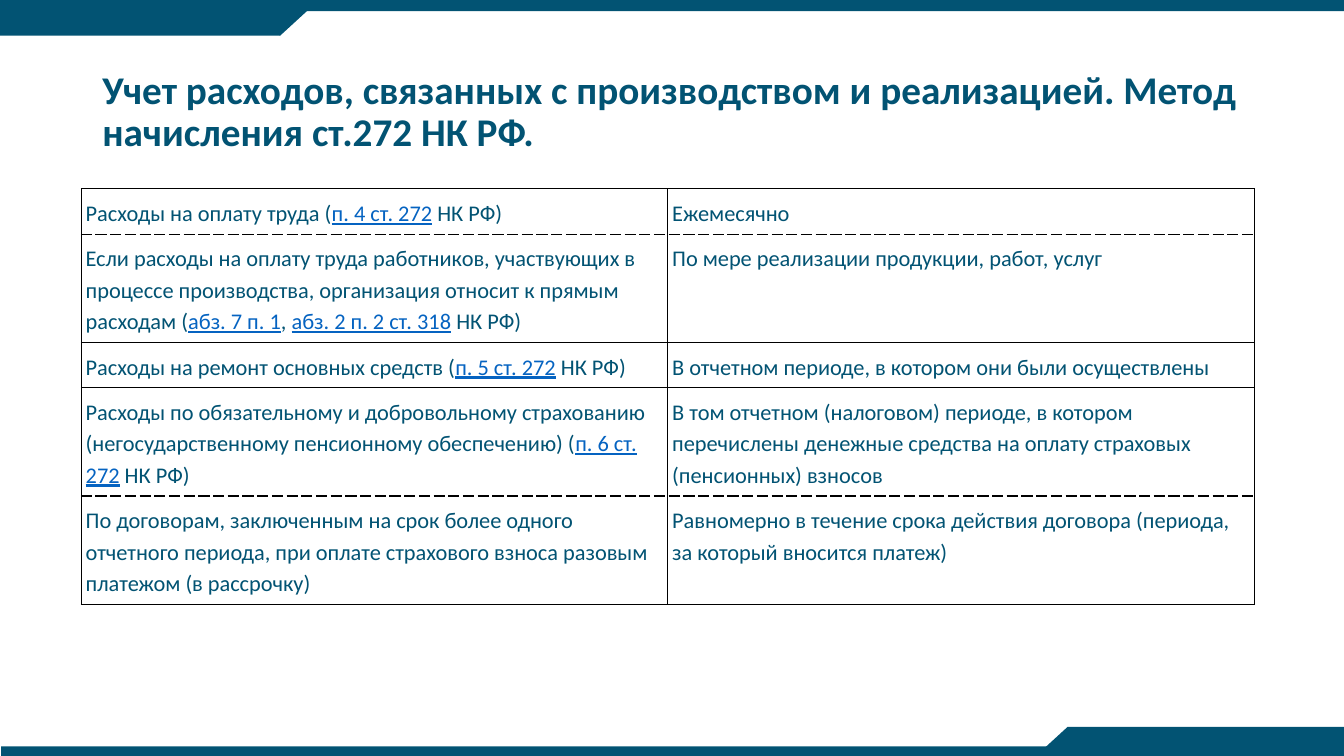
"""Build a slide with a table on when expenses are recognised under the accrual method."""
from lxml import etree
from pptx import Presentation
from pptx.dml.color import RGBColor
from pptx.enum.shapes import MSO_SHAPE
from pptx.enum.text import MSO_ANCHOR
from pptx.oxml.ns import qn
from pptx.util import Cm, Pt

RECT = MSO_SHAPE.RECTANGLE
MERGE = MSO_SHAPE.FLOWCHART_MERGE
MIDDLE = MSO_ANCHOR.MIDDLE
TEAL = "025373"
BLUE = "0563C1"


def paint(color, code):
    color.rgb = RGBColor.from_string(code)


def add_run(para, text, size, code):
    run = para.add_run()
    run.text = text
    run.font.name = "Calibri"
    run.font.size = Pt(size)
    paint(run.font.color, code)
    return run


deck = Presentation()
deck.slide_width = Cm(33.87)
deck.slide_height = Cm(19.05)
slide = deck.slides.add_slide(deck.slide_layouts[6])

bars = [
    (RECT, 0, 0, 33.87, 0.28, 0),
    (RECT, 0.03, 18.81, 33.84, 0.24, 0),
    (RECT, 0, 0.13, 7.06, 0.77, 0),
    (MERGE, 6.22, 0.13, 1.68, 0.77, 0),
    (RECT, 26.9, 18.32, 6.97, 0.73, 0),
    (MERGE, 26.06, 18.32, 1.68, 0.77, 180),
]
for kind, left, top, width, height, turn in bars:
    bar = slide.shapes.add_shape(kind, Cm(left), Cm(top), Cm(width), Cm(height))
    bar.rotation = turn
    bar.shadow.inherit = False
    bar.fill.solid()
    paint(bar.fill.fore_color, TEAL)
    bar.line.fill.background()

title = slide.shapes.add_textbox(Cm(2.33), Cm(1.01), Cm(29.21), Cm(3.68)).text_frame
title.word_wrap = True
title.vertical_anchor = MIDDLE
para = title.paragraphs[0]
para.line_spacing = 0.9
head = "Учет расходов, связанных с производством и реализацией. Метод начисления ст.272 НК РФ."
add_run(para, head, 28, TEAL).font.bold = True

# Text between bars is underlined as a reference.
rows = [
    (1.14, "Расходы на оплату труда (|п. 4 ст. 272| НК РФ)", "Ежемесячно"),
    (2.73, "Если расходы на оплату труда работников, участвующих в процессе производства, "
           "организация относит к прямым расходам (|абз. 7 п. 1|, |абз. 2 п. 2 ст. 318| НК РФ)",
     "По мере реализации продукции, работ, услуг"),
    (1.14, "Расходы на ремонт основных средств (|п. 5 ст. 272| НК РФ)",
     "В отчетном периоде, в котором они были осуществлены"),
    (2.73, "Расходы по обязательному и добровольному страхованию "
           "(негосударственному пенсионному обеспечению) (|п. 6 ст. 272| НК РФ)",
     "В том отчетном (налоговом) периоде, в котором перечислены денежные средства "
     "на оплату страховых (пенсионных) взносов"),
    (2.73, "По договорам, заключенным на срок более одного отчетного периода, "
           "при оплате страхового взноса разовым платежом (в рассрочку)",
     "Равномерно в течение срока действия договора (периода, за который вносится платеж)"),
]
dashed = {(0, "lnB"), (1, "lnT"), (3, "lnB"), (4, "lnT")}
total = sum(row[0] for row in rows)
table = slide.shapes.add_table(len(rows), 2, Cm(2.05), Cm(4.76), Cm(29.56), Cm(total)).table
table.first_row = False
table.horz_banding = False

for i, (height, *texts) in enumerate(rows):
    table.rows[i].height = Cm(height)
    for j, text in enumerate(texts):
        cell = table.cell(i, j)
        cell.margin_left = cell.margin_right = Cm(0.11)
        cell.margin_top = cell.margin_bottom = Cm(0.18)
        para = cell.text_frame.paragraphs[0]
        para.line_spacing = 1.15
        for k, part in enumerate(text.split("|")):
            link = k % 2 == 1
            run = add_run(para, part, 16, BLUE if link else TEAL)
            run.font.underline = link
        props = cell._tc.get_or_add_tcPr()
        for side in ("lnL", "lnR", "lnT", "lnB"):
            edge = etree.SubElement(props, qn("a:" + side), w=str(Pt(1)))
            fill = etree.SubElement(edge, qn("a:solidFill"))
            etree.SubElement(fill, qn("a:srgbClr"), val="000000")
            dash = "dash" if (i, side) in dashed else "solid"
            etree.SubElement(edge, qn("a:prstDash"), val=dash)
        cell.fill.background()

deck.save("out.pptx")
